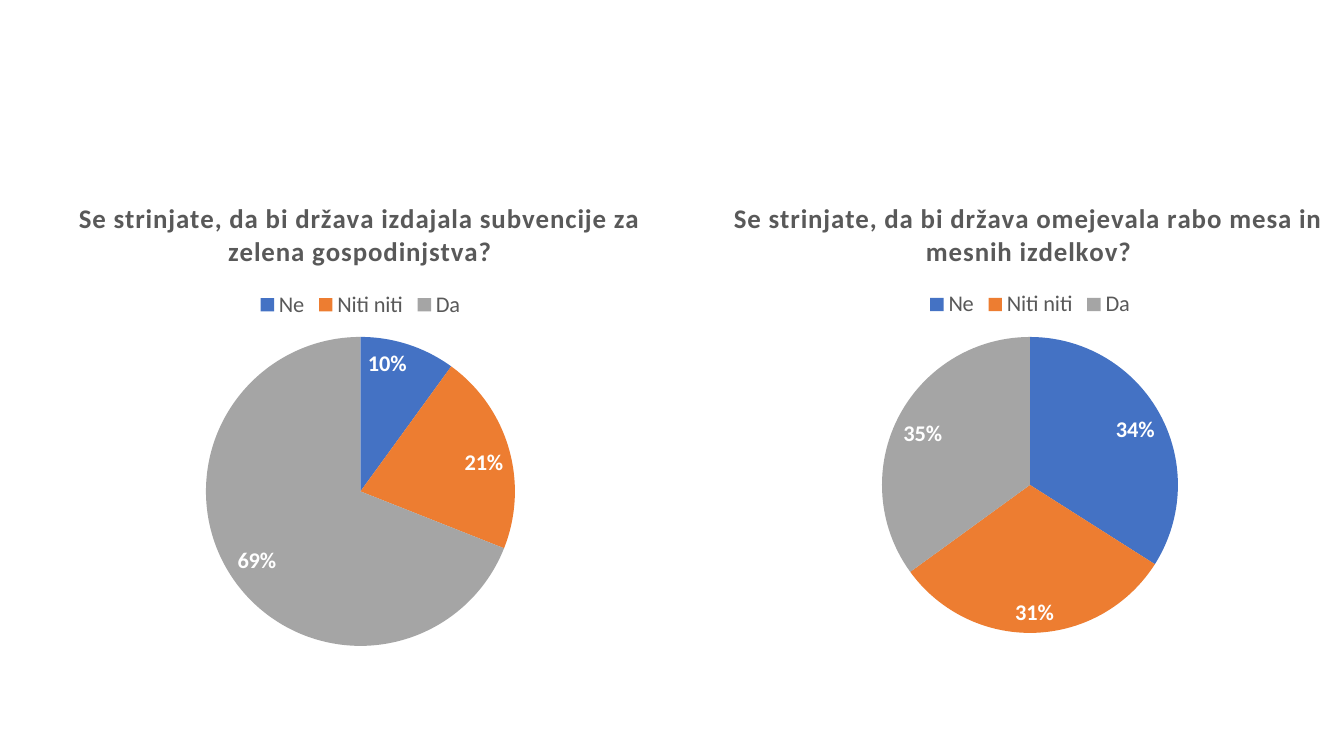
from lxml.etree import SubElement
from pptx import Presentation
from pptx.chart.data import CategoryChartData
from pptx.dml.color import RGBColor
from pptx.enum.chart import XL_CHART_TYPE, XL_LABEL_POSITION, XL_LEGEND_POSITION
from pptx.oxml.ns import qn
from pptx.util import Inches, Pt

PX = Inches(1) / 100.8
COLOURS = {
    "Ne": "4472C4",
    "Niti niti": "ED7D31",
    "Da": "A5A5A5",
    "text": "595959",
    "label": "FFFFFF",
}
ANSWERS = ["Ne", "Niti niti", "Da"]
SURVEYS = [
    {
        "question": "Se strinjate, da bi država izdajala subvencije za zelena gospodinjstva?",
        "shares": [10, 21, 69],
        "frame": (-48, 181, 817, 479),
        "heading": (74, 194),
        "pie": (206, 337, 309),
    },
    {
        "question": "Se strinjate, da bi država omejevala rabo mesa in mesnih izdelkov?",
        "shares": [34, 31, 35],
        "frame": (633, 181, 794, 465),
        "heading": (729, 194),
        "pie": (882, 337, 296),
    },
]


def style_font(font, size, colour, bold):
    font.name = "Calibri"
    font.size = Pt(size)
    font.bold = bold
    font.color.rgb = RGBColor.from_string(COLOURS[colour])


def place(element, settings):
    layout = element.find(qn("c:layout"))
    if layout is None:
        layout = SubElement(element, qn("c:layout"))
        element.insert(1 if element.tag != qn("c:plotArea") else 0, layout)
    manual = SubElement(layout, qn("c:manualLayout"))
    for tag, value in settings.items():
        SubElement(manual, qn(f"c:{tag}")).set("val", str(value))


deck = Presentation()
deck.slide_width = round(1344 * PX)
deck.slide_height = round(756 * PX)
slide = deck.slides.add_slide(deck.slide_layouts[6])

for survey in SURVEYS:
    left, top, width, height = survey["frame"]
    heading_left, heading_top = survey["heading"]
    pie_left, pie_top, diameter = survey["pie"]

    answers = CategoryChartData()
    answers.categories = ANSWERS
    answers.add_series("Series 1", survey["shares"])
    chart = slide.shapes.add_chart(
        XL_CHART_TYPE.PIE, *(round(v * PX) for v in survey["frame"]), answers
    ).chart
    chart.font.name = "Calibri"
    chart.font.size = Pt(16)

    chart.has_title = True
    question = chart.chart_title.text_frame.paragraphs[0].add_run()
    question.text = survey["question"]
    style_font(question.font, 19.2, "text", True)
    question.font._element.set("spc", "50")
    place(chart.chart_title._element, {
        "xMode": "edge",
        "yMode": "edge",
        "x": round((heading_left - left) / width, 4),
        "y": round((heading_top - top) / height, 4),
    })

    chart.has_legend = True
    chart.legend.position = XL_LEGEND_POSITION.TOP
    chart.legend.include_in_layout = False
    style_font(chart.legend.font, 16, "text", False)

    pie = chart.plots[0]
    pie.vary_by_categories = True
    for index, answer in enumerate(ANSWERS):
        fill = pie.series[0].points[index].format.fill
        fill.solid()
        fill.fore_color.rgb = RGBColor.from_string(COLOURS[answer])

    pie.has_data_labels = True
    labels = pie.data_labels
    labels.show_percentage = True
    labels.show_value = False
    labels.number_format = "0%"
    labels.number_format_is_linked = False
    labels.position = XL_LABEL_POSITION.INSIDE_END
    style_font(labels.font, 16, "label", True)

    place(chart._chartSpace.chart.plotArea, {
        "layoutTarget": "inner",
        "xMode": "edge",
        "yMode": "edge",
        "x": round((pie_left - left) / width, 4),
        "y": round((pie_top - top) / height, 4),
        "w": round(diameter / width, 4),
        "h": round(diameter / height, 4),
    })

deck.save("out.pptx")
